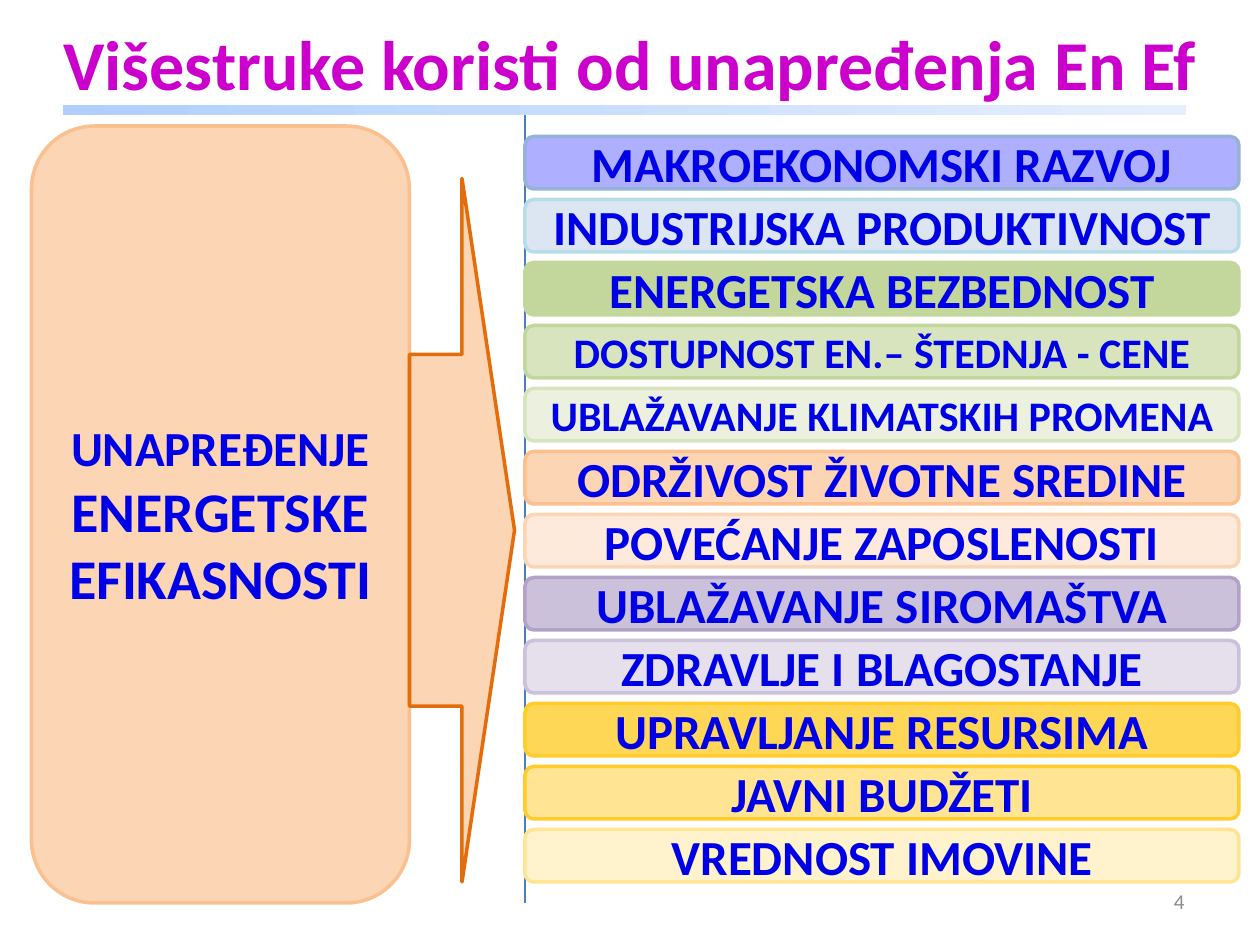
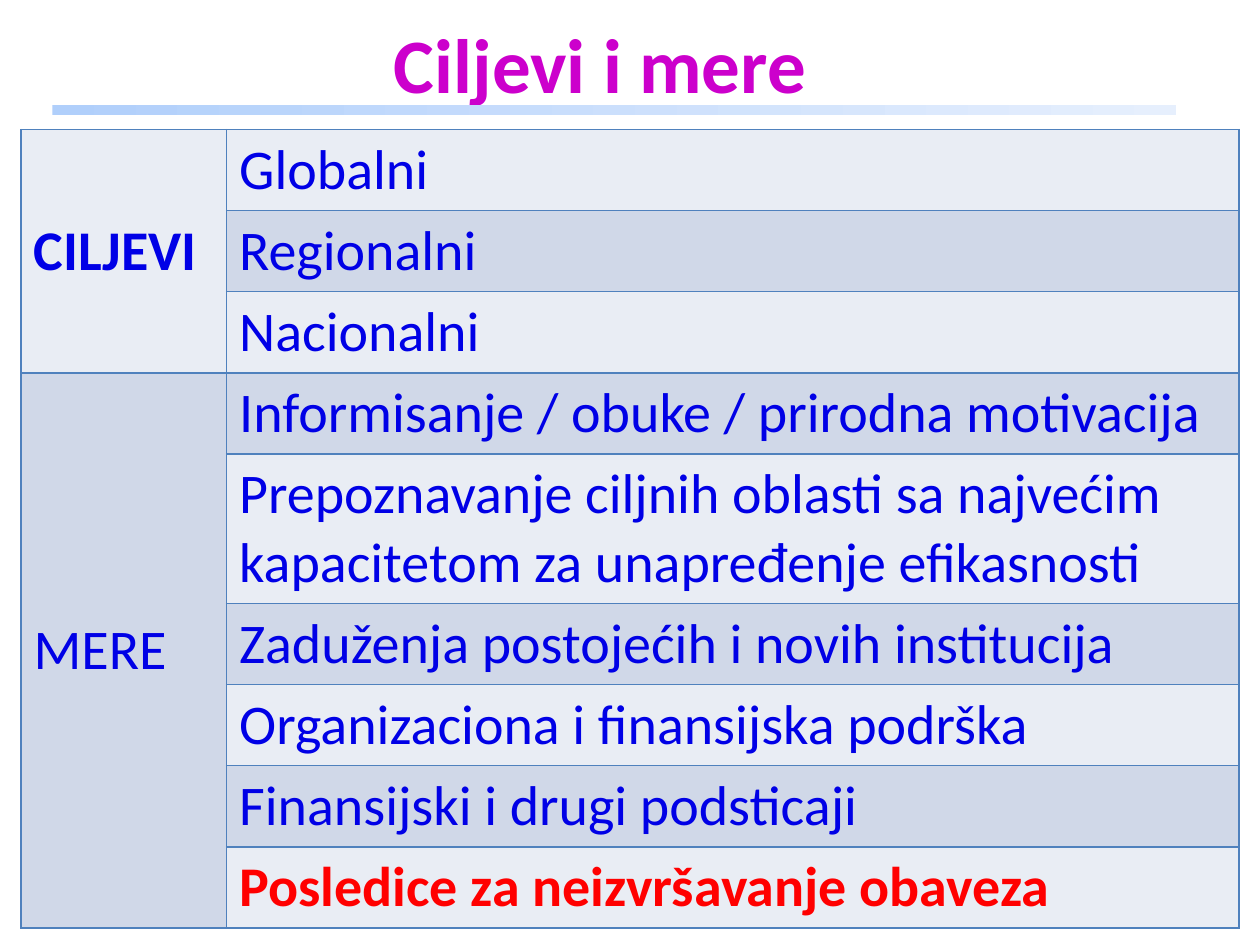
from dataclasses import dataclass

from lxml.etree import SubElement
from pptx import Presentation
from pptx.dml.color import RGBColor
from pptx.enum.shapes import MSO_CONNECTOR, MSO_SHAPE
from pptx.enum.text import MSO_ANCHOR, MSO_AUTO_SIZE, PP_ALIGN
from pptx.oxml.ns import qn
from pptx.util import Pt


@dataclass(frozen=True)
class Theme:
    """Colours and type sizes shared by the slides."""

    font: str = "Calibri"
    heading: str = "CC00CC"
    text: str = "0000E6"
    warning: str = "FF0000"
    page: str = "8C8C8C"
    peach: str = "FCD5B5"
    peach_edge: str = "FAC090"
    arrow_edge: str = "E46C0A"
    axis: str = "4B7EBC"
    grid: str = "4F81BD"
    rule_start: str = "B0CFFB"
    rule_end: str = "E6EFFD"
    bands: tuple = ("E9EDF4", "D0D8E8")
    large: int = 32
    medium: int = 28
    small: int = 24
    page_size: int = 12


THEME = Theme()

BENEFITS = [
    ("MAKROEKONOMSKI RAZVOJ", "AFAFFF", "95B3D7", THEME.medium),
    ("INDUSTRIJSKA PRODUKTIVNOST", "DCE6F2", "B7DEE8", THEME.medium),
    ("ENERGETSKA BEZBEDNOST", "C3D69B", "C3D69B", THEME.medium),
    ("DOSTUPNOST EN.– ŠTEDNJA - CENE", "D7E4BD", "C3D69B", THEME.small),
    ("UBLAŽAVANJE KLIMATSKIH PROMENA", "EBF1DE", "D7E4BD", THEME.small),
    ("ODRŽIVOST ŽIVOTNE SREDINE", THEME.peach, THEME.peach_edge, THEME.medium),
    ("POVEĆANJE ZAPOSLENOSTI", "FDEADA", THEME.peach, THEME.medium),
    ("UBLAŽAVANJE SIROMAŠTVA", "CCC1DA", "B3A2C7", THEME.medium),
    ("ZDRAVLJE I BLAGOSTANJE", "E6E0EC", "CCC1DA", THEME.medium),
    ("UPRAVLJANJE RESURSIMA", "FFD757", "FFCC29", THEME.medium),
    ("JAVNI BUDŽETI", "FFE593", "FFCC29", THEME.medium),
    ("VREDNOST IMOVINE", "FFF3CD", "FFE593", THEME.medium),
]

GOALS = ["Globalni", "Regionalni", "Nacionalni"]
MEASURES = [
    "Informisanje / obuke / prirodna motivacija",
    "Prepoznavanje ciljnih oblasti sa najvećim kapacitetom za unapređenje efikasnosti",
    "Zaduženja postojećih i novih institucija",
    "Organizaciona i finansijska podrška",
    "Finansijski i drugi podsticaji",
    "Posledice za neizvršavanje obaveza",
]
TWO_LINE_ROW = len(GOALS) + 1


def rgb(value):
    """Turn a hex string into a colour."""
    return RGBColor.from_string(value)


def style(paragraph, size, color=THEME.text, bold=True, align=PP_ALIGN.CENTER):
    """Format every run of a paragraph."""
    paragraph.alignment = align
    for run in paragraph.runs:
        run.font.name = THEME.font
        run.font.size = Pt(size)
        run.font.bold = bold
        run.font.color.rgb = rgb(color)


def add_heading(slide, text, size, left, width, rule_left):
    """Fill the title placeholder and draw the gradient rule below it."""
    heading = slide.shapes.title
    heading.left, heading.top, heading.width, heading.height = Pt(left), Pt(12), Pt(width), Pt(48)
    frame = heading.text_frame
    frame.text = text
    frame.auto_size = MSO_AUTO_SIZE.NONE
    frame.vertical_anchor = MSO_ANCHOR.MIDDLE
    style(frame.paragraphs[0], size, THEME.heading)

    rule = slide.shapes.add_shape(MSO_SHAPE.RECTANGLE, Pt(rule_left), Pt(60), Pt(642), Pt(6))
    rule.shadow.inherit = False
    rule.line.fill.background()
    rule.fill.gradient()
    rule.fill.gradient_angle = 0
    for stop, color, position in zip(
        rule.fill.gradient_stops, (THEME.rule_start, THEME.rule_end), (0, 1)
    ):
        stop.color.rgb = rgb(color)
        stop.position = position


def add_block(slide, preset, box, fill, edge, lines=()):
    """Draw an outlined shape with one paragraph per (text, size) line."""
    block = slide.shapes.add_shape(preset, *map(Pt, box))
    block.shadow.inherit = False
    block.fill.solid()
    block.fill.fore_color.rgb = rgb(fill)
    block.line.color.rgb = rgb(edge)
    block.line.width = Pt(2)
    frame = block.text_frame
    frame.word_wrap = True
    frame.vertical_anchor = MSO_ANCHOR.MIDDLE
    frame.text = "\n".join(text for text, _ in lines)
    for paragraph, (_, size) in zip(frame.paragraphs, lines):
        style(paragraph, size)


def add_axis(slide, x, top, bottom):
    """Draw the thin vertical line along the benefits."""
    axis = slide.shapes.add_connector(MSO_CONNECTOR.STRAIGHT, Pt(x), Pt(top), Pt(x), Pt(bottom))
    axis.line.color.rgb = rgb(THEME.axis)
    axis.line.width = Pt(0.75)
    SubElement(axis.line._get_or_add_ln().getparent(), qn("a:effectLst"))


def add_page_number(slide, number):
    """Write the page number at the lower right."""
    page = slide.shapes.add_textbox(Pt(516), Pt(500.4), Pt(168), Pt(28.8))
    frame = page.text_frame
    frame.word_wrap = True
    frame.vertical_anchor = MSO_ANCHOR.MIDDLE
    frame.text = number
    style(frame.paragraphs[0], THEME.page_size, THEME.page, False, PP_ALIGN.RIGHT)


def add_borders(cell):
    """Give a cell thin lines on all four sides."""
    properties = cell._tc.get_or_add_tcPr()
    for index, side in enumerate(("a:lnL", "a:lnR", "a:lnT", "a:lnB")):
        border = properties.makeelement(qn(side), {"w": str(Pt(1))})
        fill = SubElement(border, qn("a:solidFill"))
        SubElement(fill, qn("a:srgbClr"), val=THEME.grid)
        properties.insert(index, border)


def fill_cell(cell, text, color=THEME.text, bold=False):
    """Write formatted text into a table cell."""
    cell.text_frame.text = text
    style(cell.text_frame.paragraphs[0], THEME.large, color, bold, PP_ALIGN.LEFT)


def add_goals_table(slide):
    """Build the table of goals and measures with merged group cells."""
    entries = GOALS + MEASURES
    frame = slide.shapes.add_table(len(entries), 2, Pt(12), Pt(74), Pt(696), Pt(456))
    table = frame.table
    table.first_row = table.horz_banding = False
    for column, width in zip(table.columns, (117.5, 578.5)):
        column.width = Pt(width)
    for index, entry in enumerate(entries):
        table.rows[index].height = Pt(85.2 if index == TWO_LINE_ROW else 46.35)
        for cell in table.rows[index].cells:
            cell.fill.solid()
            cell.fill.fore_color.rgb = rgb(THEME.bands[index % 2])
            add_borders(cell)
        last = entry == MEASURES[-1]
        fill_cell(table.cell(index, 1), entry, THEME.warning if last else THEME.text, last)

    split = len(GOALS)
    for label, first, end, bold in (
        ("CILJEVI", 0, split, True),
        ("MERE", split, len(entries), False),
    ):
        group = table.cell(first, 0)
        group.merge(table.cell(end - 1, 0))
        group.vertical_anchor = MSO_ANCHOR.MIDDLE
        fill_cell(group, label, bold=bold)


def build_benefits(slide):
    """Compose the slide on the benefits of energy efficiency."""
    add_heading(slide, "Višestruke koristi od unapređenja En Ef", 40, 12, 696, 36)
    add_page_number(slide, "4")
    add_block(
        slide, MSO_SHAPE.ROUNDED_RECTANGLE, (18, 72, 216, 444), THEME.peach, THEME.peach_edge,
        [("UNAPREĐENJE", THEME.medium), ("ENERGETSKE EFIKASNOSTI", THEME.large)],
    )
    add_axis(slide, 300, 66, 516)
    for index, (benefit, fill, edge, size) in enumerate(BENEFITS):
        add_block(
            slide, MSO_SHAPE.ROUNDED_RECTANGLE, (300, 78 + 36 * index, 408, 30),
            fill, edge, [(benefit, size)],
        )
    add_block(slide, MSO_SHAPE.RIGHT_ARROW, (234, 102, 60, 402), THEME.peach, THEME.arrow_edge)


def build_goals(slide):
    """Compose the slide on goals and measures."""
    add_heading(slide, "Ciljevi i mere ", 44, 42, 612, 30)
    add_goals_table(slide)


def main():
    """Build both slides and save the presentation."""
    deck = Presentation()
    deck.slide_width, deck.slide_height = Pt(720), Pt(540)
    title_only = deck.slide_layouts[5]
    for build in (build_benefits, build_goals):
        build(deck.slides.add_slide(title_only))
    deck.save("out.pptx")


if __name__ == "__main__":
    main()
